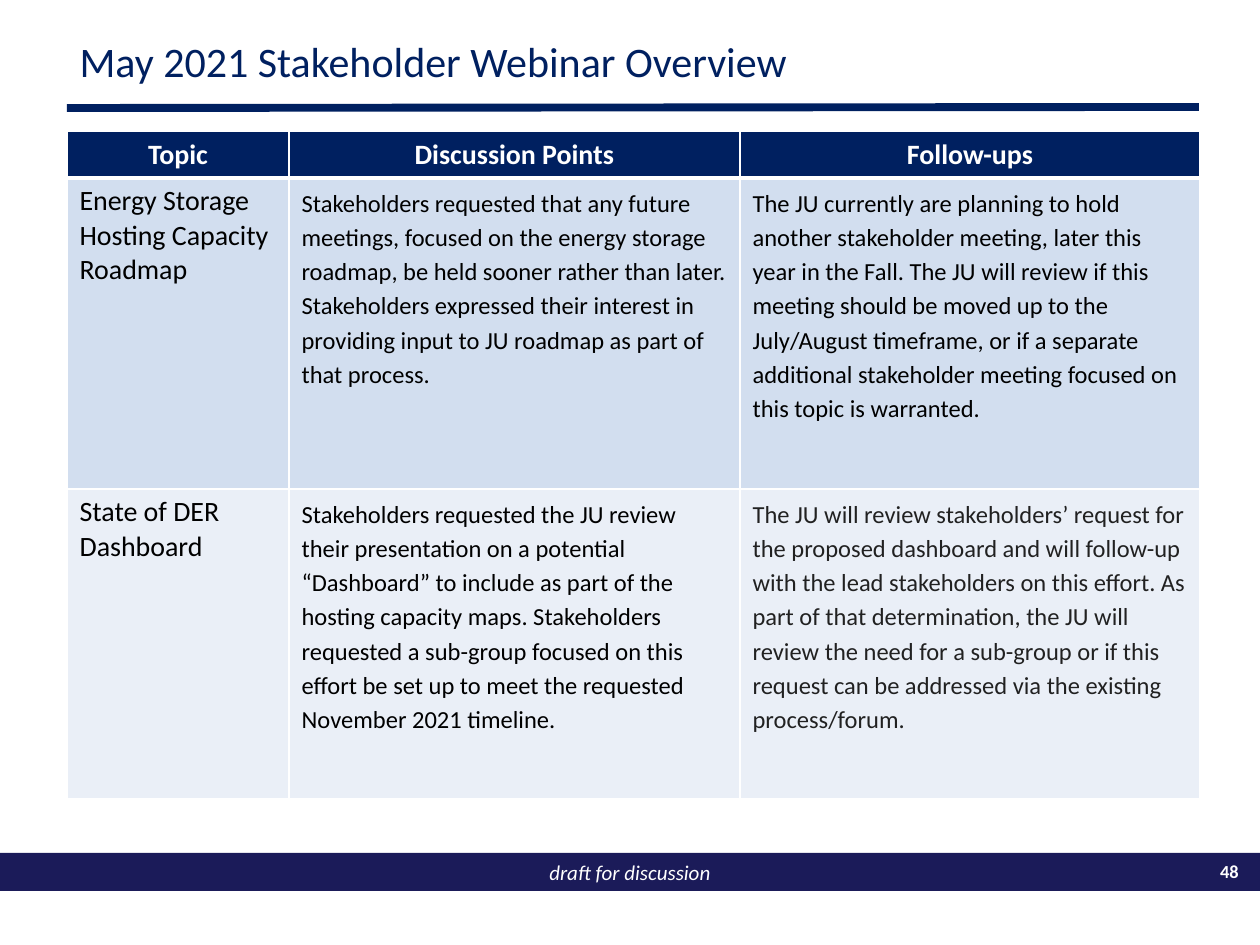
import pptx
import pptx.util
import pptx.dml.color
import pptx.enum.shapes
import pptx.enum.text
import pptx.oxml
import pptx.oxml.ns
import lxml.etree

PX = 914400 / 126
COLORS = {
    "navy": "002060", "bar": "1B1B59", "white": "FFFFFF", "black": "000000",
    "gray": "212121", "blue": "D2DEEF", "pale": "EAEFF7",
}
ALIGN = pptx.enum.text.PP_ALIGN
ANCHOR = pptx.enum.text.MSO_ANCHOR


def box(*nums):
    return [round(num * PX) for num in nums]


def put(frame, text, size=14, color="black", bold=False, italic=False,
        align=ALIGN.LEFT, anchor=ANCHOR.TOP, space=None):
    frame.word_wrap = True
    frame.vertical_anchor = anchor
    para = frame.paragraphs[0]
    para.alignment = align
    para.line_spacing = space
    run = para.add_run()
    run.text = text
    font = run.font
    font.name = "Calibri"
    font.size = pptx.util.Pt(size)
    font.bold = bold
    font.italic = italic
    font.color.rgb = pptx.dml.color.RGBColor.from_string(COLORS[color])


deck = pptx.Presentation()
deck.slide_width, deck.slide_height = box(1260, 945)
slide = deck.slides.add_slide(deck.slide_layouts[5])
shapes = slide.shapes

title = shapes.title
title.left, title.top, title.width, title.height = box(67, 35, 1133, 57)
put(title.text_frame, "May 2021 Stakeholder Webinar Overview", size=24,
    color="navy", anchor=ANCHOR.MIDDLE, space=0.9)

foot = shapes.add_shape(pptx.enum.shapes.MSO_SHAPE.RECTANGLE, *box(0, 853, 1260, 38))
foot.shadow.inherit = False
foot.fill.solid()
foot.fill.fore_color.rgb = pptx.dml.color.RGBColor.from_string(COLORS["bar"])
foot.line.fill.background()
put(foot.text_frame, "draft for discussion", size=12, color="white", italic=True,
    align=ALIGN.CENTER, anchor=ANCHOR.MIDDLE)

page = shapes.add_textbox(*box(1200, 854, 51, 36))
put(page.text_frame, "48", size=10.5, color="white", bold=True, align=ALIGN.RIGHT)

rule = shapes.add_connector(pptx.enum.shapes.MSO_CONNECTOR.STRAIGHT,
                            *box(67, 108, 1199, 107))
rule.line.color.rgb = pptx.dml.color.RGBColor.from_string(COLORS["navy"])
rule.line.width = pptx.util.Pt(4.5)
lxml.etree.SubElement(rule.element.spPr, pptx.oxml.ns.qn("a:effectLst"))

rows = [
    ["Topic", "Discussion Points", "Follow-ups"],
    ["Energy Storage Hosting Capacity Roadmap",
     "Stakeholders requested that any future meetings, focused on the energy storage "
     "roadmap, be held sooner rather than later. Stakeholders expressed their interest "
     "in providing input to JU roadmap as part of that process.",
     "The JU currently are planning to hold another stakeholder meeting, later this "
     "year in the Fall. The JU will review if this meeting should be moved up to the "
     "July/August timeframe, or if a separate additional stakeholder meeting focused "
     "on this topic is warranted."],
    ["State of DER Dashboard",
     "Stakeholders requested the JU review their presentation on a potential "
     "“Dashboard” to include as part of the hosting capacity maps. Stakeholders "
     "requested a sub-group focused on this effort be set up to meet the requested "
     "November 2021 timeline.",
     "The JU will review stakeholders’ request for the proposed dashboard and will "
     "follow-up with the lead stakeholders on this effort. As part of that "
     "determination, the JU will review the need for a sub-group or if this request "
     "can be addressed via the existing process/forum."],
]
fills = ["navy", "blue", "pale"]
table = shapes.add_table(3, 3, *box(67, 131, 1133, 668)).table
for col, width in zip(table.columns, box(222, 451, 460)):
    col.width = width
for row, height in zip(table.rows, box(47, 311, 310)):
    row.height = height

for r, texts in enumerate(rows):
    for c, text in enumerate(texts):
        cell = table.cell(r, c)
        props = cell._tc.get_or_add_tcPr()
        for side in "LRTB":
            thick = (r == 0 and side == "B") or (r == 1 and side == "T")
            width = pptx.util.Pt(3 if thick else 1)
            props.append(pptx.oxml.parse_xml(
                f'<a:ln{side} {pptx.oxml.ns.nsdecls("a")} w="{width}"><a:solidFill>'
                f'<a:srgbClr val="{COLORS["white"]}"/></a:solidFill></a:ln{side}>'))
        cell.fill.solid()
        cell.fill.fore_color.rgb = pptx.dml.color.RGBColor.from_string(COLORS[fills[r]])
        if r == 0:
            put(cell.text_frame, text, size=16, color="white", bold=True,
                align=ALIGN.CENTER)
            cell.vertical_anchor = ANCHOR.MIDDLE
        elif c == 0:
            put(cell.text_frame, text, size=16)
        else:
            put(cell.text_frame, text, space=1.15,
                color="gray" if (r, c) == (2, 2) else "black")

deck.save("out.pptx")
